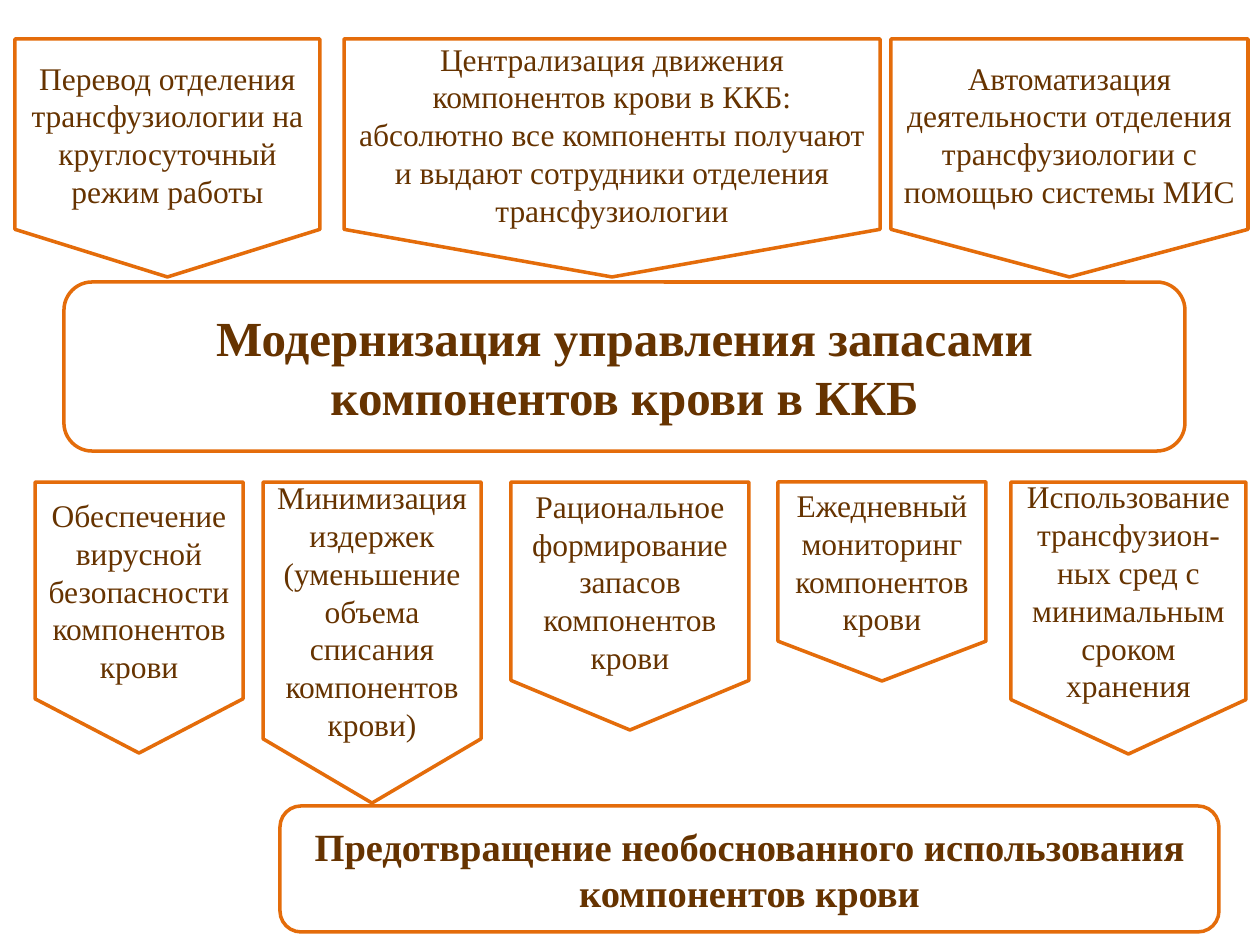
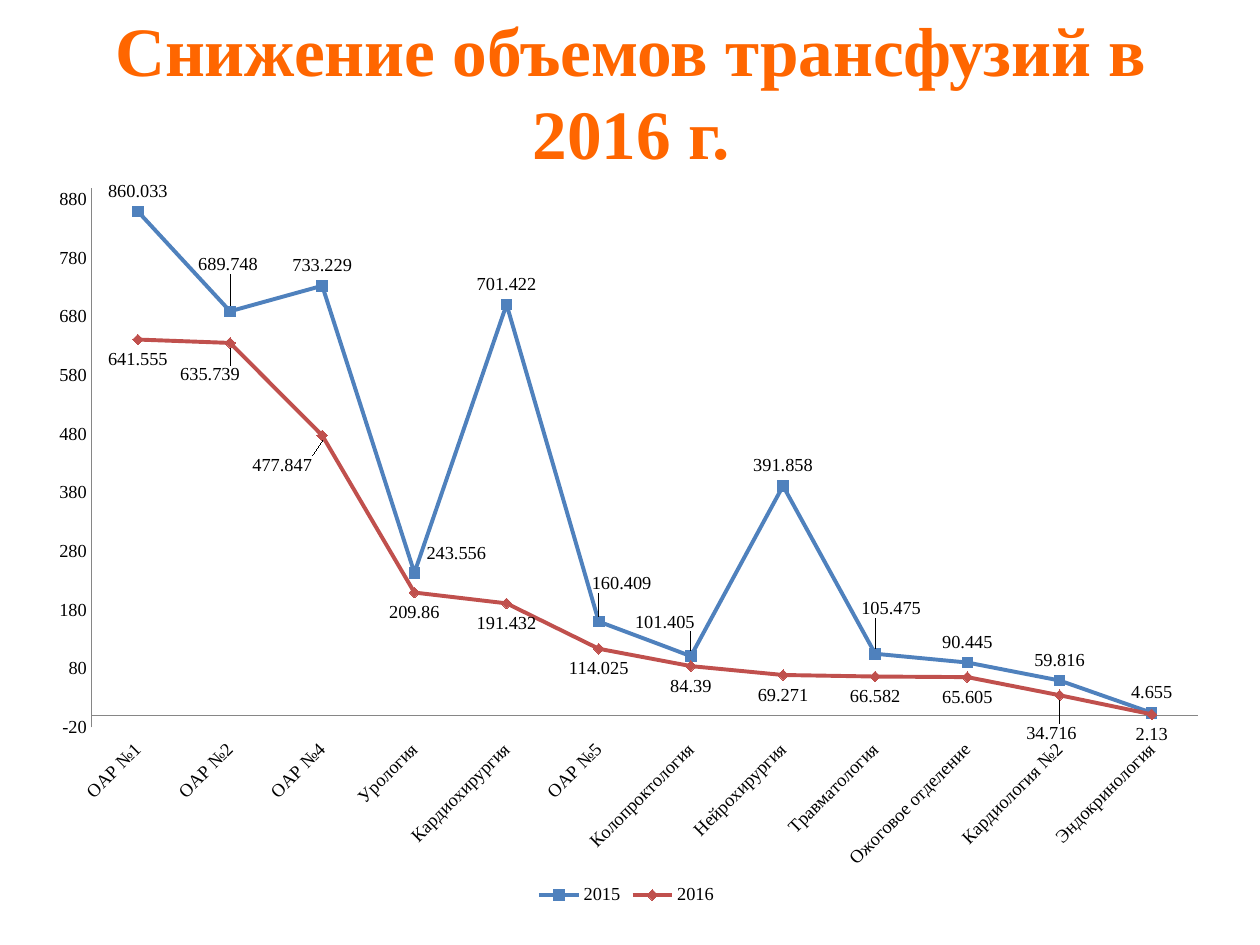
import pptx
import pptx.chart.data
import pptx.dml.color
import pptx.enum.chart
import pptx.enum.shapes
import pptx.enum.text
import pptx.oxml
import pptx.oxml.ns
import pptx.util

# Content: slide 1, (left, width, height, text)
MEASURES = [
    (15, 305, 238, "Перевод отделения трансфузиологии на круглосуточный режим работы"),
    (344, 536, 238, "Централизация движения компонентов крови в ККБ:\vабсолютно все "
                    "компоненты получают и выдают сотрудники отделения трансфузиологии"),
    (891, 357, 238, "Автоматизация деятельности отделения трансфузиологии "
                    "с помощью системы МИС"),
]
RESULTS = [
    (35, 208, 271, "Обеспечение вирусной безопасности компонентов крови"),
    (263, 218, 321, "Минимизация издержек (уменьшение объема списания компонентов крови)"),
    (511, 238, 248, "Рациональное формирование запасов компонентов крови"),
    (778, 208, 199, "Ежедневный мониторинг компонентов крови"),
    (1011, 235, 272, "Использование трансфузион-ных сред с минимальным сроком хранения"),
]
ROWS = [(39, MEASURES), (482, RESULTS)]  # top, pointers
BANNERS = [
    ((64, 282, 1121, 169), "banner", "Модернизация управления запасами компонентов крови в ККБ"),
    ((280, 806, 939, 126), "outcome", "Предотвращение необоснованного использования компонентов крови"),
]

# Content: slide 2
TITLE = "Снижение объемов трансфузий в 2016 г."
TITLE_AREA = (64, 16, 1134, 149)
CHART_AREA = (35, 165, 1183, 745)
PLOT_LAYOUT = {"x": 0.048, "y": 0.031, "w": 0.935, "h": 0.724}
DEPARTMENTS = ["ОАР №1", "ОАР №2", "ОАР №4", "Урология", "Кардиохирургия", "ОАР №5",
               "Колопроктология", "Нейрохирургия", "Травматология",
               "Ожоговое отделение", "Кардиология №2", "Эндокринология"]
# "moved" shifts single labels, in px from their usual place
VOLUMES = [
    {"name": "2015", "color": "4F81BD", "marker": "SQUARE", "size": 6, "labels": "ABOVE",
     "values": [860.033, 689.748, 733.229, 243.556, 701.422, 160.409,
                101.405, 391.858, 105.475, 90.445, 59.816, 4.655],
     "moved": {1: (-2, -27), 3: (42, 1), 5: (23, -18), 6: (-26, -14), 8: (16, -25)}},
    {"name": "2016", "color": "C0504D", "marker": "DIAMOND", "size": 6, "labels": "BELOW",
     "values": [641.555, 635.739, 477.847, 209.86, 191.432, 114.025,
                84.39, 69.271, 66.582, 65.605, 34.716, 2.13],
     "moved": {1: (-20, 12), 2: (-40, 10), 10: (-8, 18)}},
]


class Theme:
    font = "Times New Roman"
    paper = "FFFFFF"
    border = "E46C0A"
    axis = "868686"
    text = {
        "pointer": {"size": 18, "color": "663300", "bold": False},
        "banner": {"size": 28, "color": "663300", "bold": True},
        "outcome": {"size": 22, "color": "663300", "bold": True},
        "title": {"size": 39.6, "color": "FF6600", "bold": True},
        "chart": {"size": 10.5, "color": "000000", "bold": False},
    }


def px(length):
    return round(length * 914400 / 126)


def rgb(code):
    return pptx.dml.color.RGBColor.from_string(code)


def set_font(font, style):
    look = Theme.text[style]
    formats = {"name": Theme.font, "size": pptx.util.Pt(look["size"]), "bold": look["bold"]}
    for key, value in formats.items():
        setattr(font, key, value)
    font.color.rgb = rgb(look["color"])


def write_text(box, text, style):
    frame = box.text_frame
    frame.word_wrap = True
    frame.vertical_anchor = pptx.enum.text.MSO_ANCHOR.MIDDLE
    para = frame.paragraphs[0]
    para.text = text
    para.alignment = pptx.enum.text.PP_ALIGN.CENTER
    for span in para.runs:
        set_font(span.font, style)


def add_panel(page, kind, area, text, style):
    panel = page.shapes.add_shape(kind, *map(px, area))
    panel.shadow.inherit = False
    panel.fill.solid()
    panel.fill.fore_color.rgb = rgb(Theme.paper)
    panel.line.color.rgb = rgb(Theme.border)
    panel.line.width = pptx.util.Pt(2)
    write_text(panel, text, style)


def set_layout(parent, position, values, target=""):
    """Give a chart part a manual layout, as fractions of the chart."""
    for old in parent.findall(pptx.oxml.ns.qn("c:layout")):
        parent.remove(old)
    modes = '<c:xMode val="edge"/><c:yMode val="edge"/>' if target else ""
    sizes = "".join(f'<c:{key} val="{value:.4f}"/>' for key, value in values.items())
    parent.insert(position, pptx.oxml.parse_xml(
        f'<c:layout {pptx.oxml.ns.nsdecls("c")}><c:manualLayout>'
        f'{target}{modes}{sizes}</c:manualLayout></c:layout>'))


def style_axes(chart):
    axis_marks = pptx.enum.chart.XL_TICK_MARK
    for axis in (chart.category_axis, chart.value_axis):
        axis.major_tick_mark = axis.minor_tick_mark = axis_marks.NONE
        axis.has_major_gridlines = False
        axis.format.line.color.rgb = rgb(Theme.axis)
        axis.format.line.width = pptx.util.Pt(0.75)
        set_font(axis.tick_labels.font, "chart")
    scale = {"minimum_scale": -20, "maximum_scale": 900, "major_unit": 100}
    for key, value in scale.items():
        setattr(chart.value_axis, key, value)
    categories = chart.category_axis
    categories.tick_label_position = pptx.enum.chart.XL_TICK_LABEL_POSITION.LOW
    body = categories.tick_labels.font._element.getparent().getparent().getparent()
    slant = body.find(pptx.oxml.ns.qn("a:bodyPr"))
    slant.set("rot", "-2700000")
    slant.set("vert", "horz")


def style_series(series, volume):
    color = rgb(volume["color"])
    series.smooth = False
    series.format.line.color.rgb = color
    series.format.line.width = pptx.util.Pt(2.25)
    marker = series.marker
    marker.style = pptx.enum.chart.XL_MARKER_STYLE[volume["marker"]]
    marker.size = volume["size"]
    marker.format.fill.solid()
    marker.format.fill.fore_color.rgb = color
    marker.format.line.color.rgb = color

    # Value labels, some moved away from the lines
    place = pptx.enum.chart.XL_LABEL_POSITION[volume["labels"]]
    labels = series.data_labels
    labels.show_value = True
    labels.position = place
    set_font(labels.font, "chart")
    for index in volume["moved"]:
        label = series.points[index].data_label
        set_font(label.font, "chart")
        label.position = place
    for node in labels._element.findall(pptx.oxml.ns.qn("c:dLbl")):
        index = int(node.find(pptx.oxml.ns.qn("c:idx")).get("val"))
        right, down = volume["moved"][index]
        set_layout(node, 1, {"x": right / CHART_AREA[2], "y": down / CHART_AREA[3]})


def add_volume_chart(page):
    data = pptx.chart.data.CategoryChartData()
    data.categories = DEPARTMENTS
    for volume in VOLUMES:
        data.add_series(volume["name"], volume["values"])
    kind = pptx.enum.chart.XL_CHART_TYPE.LINE_MARKERS
    chart = page.shapes.add_chart(kind, *map(px, CHART_AREA), data).chart
    chart.has_title = False
    set_font(chart.font, "chart")
    chart.plots[0].vary_by_categories = False
    style_axes(chart)
    for series, volume in zip(chart.plots[0].series, VOLUMES):
        style_series(series, volume)
    chart.has_legend = True
    chart.legend.position = pptx.enum.chart.XL_LEGEND_POSITION.BOTTOM
    chart.legend.include_in_layout = False
    set_font(chart.legend.font, "chart")
    plot_area = chart._chartSpace.find(".//" + pptx.oxml.ns.qn("c:plotArea"))
    set_layout(plot_area, 0, PLOT_LAYOUT, '<c:layoutTarget val="inner"/>')


def build_management_slide(page):
    shapes = pptx.enum.shapes.MSO_SHAPE
    for top, pointers in ROWS:
        for left, width, height, text in pointers:
            add_panel(page, shapes.FLOWCHART_OFFPAGE_CONNECTOR,
                      (left, top, width, height), text, "pointer")
    for area, style, text in BANNERS:
        add_panel(page, shapes.ROUNDED_RECTANGLE, area, text, style)


def build_volume_slide(page):
    write_text(page.shapes.add_textbox(*map(px, TITLE_AREA)), TITLE, "title")
    add_volume_chart(page)


def main():
    deck = pptx.Presentation()
    deck.slide_width, deck.slide_height = px(1260), px(945)
    for build in (build_management_slide, build_volume_slide):
        build(deck.slides.add_slide(deck.slide_layouts[6]))
    deck.save("out.pptx")


if __name__ == "__main__":
    main()
